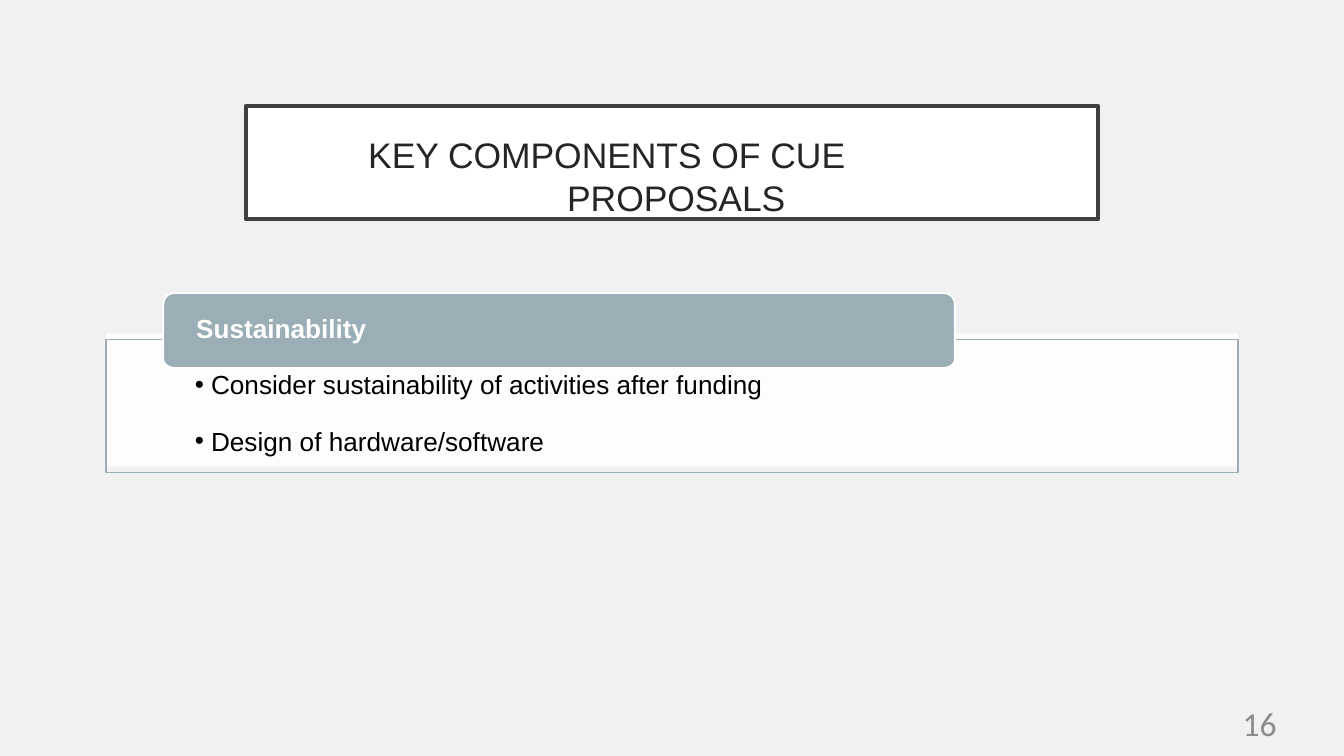
from pptx import Presentation
from pptx.dml.color import RGBColor as RGB
from pptx.enum.shapes import MSO_SHAPE as Kind
from pptx.enum.text import MSO_ANCHOR as Anchor, PP_ALIGN as Align
from pptx.oxml.ns import qn
from pptx.util import Inches, Pt
from lxml.etree import SubElement

hues = {"page": "F1F1F1", "white": "FFFFFF", "frame": "404040", "title": "252525",
        "slate": "9BAEB5", "black": "000000", "number": "8C8C8C"}

deck = Presentation()
deck.slide_width = Inches(10)
deck.slide_height = deck.slide_width * 9 // 16
col, row = deck.slide_width / 100, deck.slide_height / 100
slide = deck.slides.add_slide(deck.slide_layouts[6])
back = slide.background.fill
back.solid()
back.fore_color.rgb = RGB.from_string(hues["page"])


def add_box(kind, area, fill=None, line=None, width=1, curve=None):
    x, y, w, h = area
    spot = int(x * col), int(y * row), int(w * col), int(h * row)
    if kind is None:
        return slide.shapes.add_textbox(*spot)
    box = slide.shapes.add_shape(kind, *spot)
    box.shadow.inherit = False
    if fill:
        box.fill.solid()
        box.fill.fore_color.rgb = RGB.from_string(hues[fill])
    else:
        box.fill.background()
    if line:
        box.line.color.rgb = RGB.from_string(hues[line])
        box.line.width = Pt(width)
    else:
        box.line.fill.background()
    if curve:
        box.adjustments[0] = curve
    return box


def add_text(box, paras, top=0):
    frame = box.text_frame
    form = {"word_wrap": True, "vertical_anchor": Anchor.TOP, "margin_left": 0,
            "margin_right": 0, "margin_bottom": 0, "margin_top": Inches(top)}
    for key, val in form.items():
        setattr(frame, key, val)
    for i, (text, size, hue, look) in enumerate(paras):
        para = frame.add_paragraph() if i else frame.paragraphs[0]
        para.text = text
        para.alignment = look.get("align", Align.LEFT)
        para.space_before = Pt(look.get("before", 0))
        props = para._p.get_or_add_pPr()
        for key, val in zip(("marL", "indent", "marR"), look.get("indent", ())):
            props.set(key, str(Inches(val)))
        if "bullet" in look:
            SubElement(props, qn("a:buFont")).set("typeface", "Arial")
            SubElement(props, qn("a:buChar")).set("char", look["bullet"])
        for run in para.runs:
            style = {"name": look.get("font", "Arial"), "size": Pt(size),
                     "bold": look.get("bold", False)}
            for key, val in style.items():
                setattr(run.font, key, val)
            run.font.color.rgb = RGB.from_string(hues[hue])


title = add_box(Kind.RECTANGLE, (18.3, 14.04, 63.4, 14.93), "white", "frame", 2.5)
add_text(title, [("KEY COMPONENTS OF CUE PROPOSALS", 19, "title",
                  {"indent": (2.39, -1.48, 1.48), "before": 14.1})], 0.2)

panel = add_box(Kind.RECTANGLE, (7.9, 44.09, 84.2, 17.6), "white")
tint = panel.element.spPr.find(qn("a:solidFill")).find(qn("a:srgbClr"))
SubElement(tint, qn("a:alpha")).set("val", "90000")
add_box(Kind.RECTANGLE, (7.9, 44.9, 84.2, 17.6), line="slate")
add_box(Kind.ROUNDED_RECTANGLE, (12.15, 38.76, 58.9, 9.78), "slate", curve=0.15)
add_box(Kind.ROUNDED_RECTANGLE, (12.15, 38.76, 58.9, 12.44), line="white", curve=0.12)

point = {"indent": (0.14, -0.12), "before": 13.5, "bullet": "•"}
body = add_box(None, (14.3, 41.1, 55.2, 19.73))
add_text(body, [
    ("Sustainability", 14, "white", {"indent": (0.03, 0), "before": 1, "bold": True}),
    ("Consider sustainability of activities after funding", 14, "black", point),
    ("Design of hardware/software", 14, "black", point),
], 0.01)

number = add_box(None, (72, 93, 23, 5))
add_text(number, [("16", 18, "number", {"font": "Calibri", "align": Align.RIGHT})])

deck.save("out.pptx")
